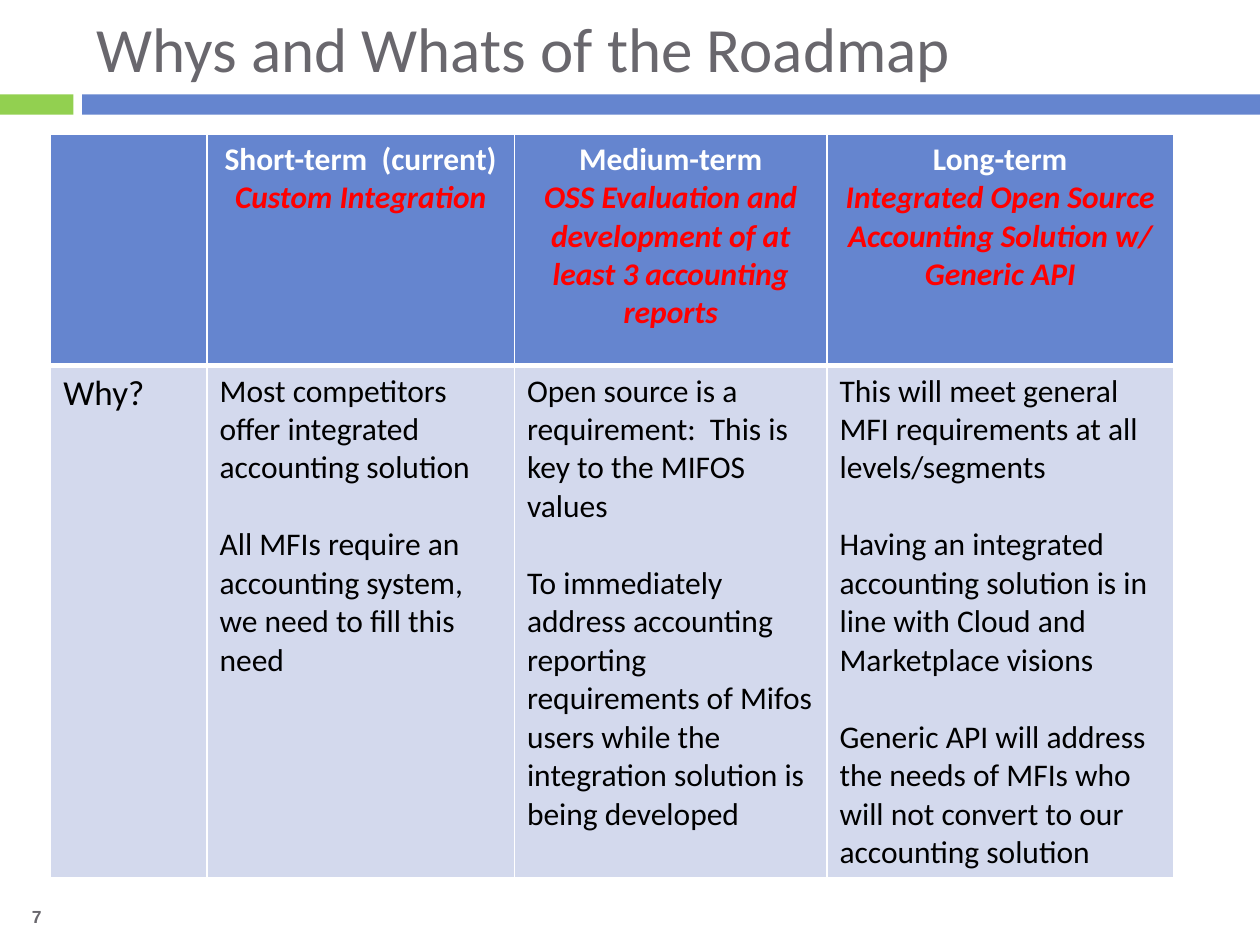
import pptx
import pptx.util
import pptx.dml.color
import pptx.enum.shapes
import pptx.enum.text
from dataclasses import dataclass
from lxml import etree

Pt = pptx.util.Pt
RGB = pptx.dml.color.RGBColor.from_string
ALIGN = pptx.enum.text.PP_ALIGN
MIDDLE = pptx.enum.text.MSO_ANCHOR.MIDDLE
NS = "http://schemas.openxmlformats.org/drawingml/2006/main"


@dataclass(frozen=True)
class Theme:
    blue: str = "6585CF"
    green: str = "92D050"
    pale: str = "D3D9ED"
    grey: str = "69676D"
    red: str = "FF0000"
    white: str = "FFFFFF"
    black: str = "000000"
    font: str = "Calibri"
    number_font: str = "Arial"
    title_size: int = 36
    label_size: int = 20
    text_size: int = 18
    number_size: int = 10
    paragraph_gap: int = 22


T = Theme()
COLUMNS = [89.3, 175.7, 178.6, 198]
ROWS = [132.5, 292.5]
HEADINGS = [
    ("Short-term  (current)", "Custom Integration"),
    ("Medium-term", "OSS Evaluation and development of at least 3 accounting reports"),
    ("Long-term", "Integrated Open Source Accounting Solution w/ Generic API"),
]
REASONS = [
    ("Most competitors offer integrated accounting solution",
     "All MFIs require an accounting system, we need to fill this need"),
    ("Open source is a requirement:  This is key to the MIFOS values",
     "To immediately address accounting reporting requirements of Mifos users "
     "while the integration solution is being developed"),
    ("This will meet general MFI requirements at all levels/segments",
     "Having an integrated accounting solution is in line with Cloud and Marketplace visions",
     "Generic API will address the needs of MFIs who will not convert to our accounting solution"),
]


def write(p, text, color, align=ALIGN.LEFT, **formats):
    p.alignment = align
    r = p.add_run()
    r.text = text
    values = {"name": T.font, "size": T.text_size, "bold": False, "italic": False} | formats
    values["size"] = Pt(values["size"])
    for name, value in values.items():
        setattr(r.font, name, value)
    r.font.color.rgb = RGB(color)


def write_paragraphs(tf, items, gap=0):
    for i, item in enumerate(items):
        p = tf.add_paragraph() if i else tf.paragraphs[0]
        if i and gap:
            p.space_before = Pt(gap)
        write(p, **item)


def add_title(s, x, y, w, h):
    sp = s.shapes.title
    for name, value in {"left": x, "top": y, "width": w, "height": h}.items():
        setattr(sp, name, Pt(value))
    tf = sp.text_frame
    tf.auto_size = pptx.enum.text.MSO_AUTO_SIZE.NONE
    tf.vertical_anchor = MIDDLE
    write(tf.paragraphs[0], "Whys and Whats of the Roadmap", T.grey, size=T.title_size)


def add_band(s, x, y, w, h):
    tab, gap = 42, 5
    for left, width, color in ((x, tab, T.green), (x + tab + gap, w - tab - gap, T.blue)):
        sp = s.shapes.add_shape(pptx.enum.shapes.MSO_SHAPE.RECTANGLE,
                                Pt(left), Pt(y), Pt(width), Pt(h))
        sp.shadow.inherit = False
        sp.fill.solid()
        sp.fill.fore_color.rgb = RGB(color)
        sp.line.fill.background()


def add_number(s, x, y, w, h):
    tf = s.shapes.add_textbox(Pt(x), Pt(y), Pt(w), Pt(h)).text_frame
    tf.word_wrap = True
    tf.vertical_anchor = MIDDLE
    write(tf.paragraphs[0], "7", T.grey, ALIGN.CENTER,
          name=T.number_font, size=T.number_size, bold=True)


def style_cell(cell, fill, top, bottom):
    tcPr = cell._tc.get_or_add_tcPr()
    for side, width in {"L": 1, "R": 1, "T": top, "B": bottom}.items():
        ln = etree.SubElement(tcPr, f"{{{NS}}}ln{side}", w=str(Pt(width)))
        solid = etree.SubElement(ln, f"{{{NS}}}solidFill")
        etree.SubElement(solid, f"{{{NS}}}srgbClr", val=T.white)
    cell.fill.solid()
    cell.fill.fore_color.rgb = RGB(fill)


def add_roadmap(s, x, y, w, h):
    table = s.shapes.add_table(len(ROWS), len(COLUMNS), Pt(x), Pt(y), Pt(w), Pt(h)).table
    for column, share in zip(table.columns, COLUMNS):
        column.width = Pt(round(w * share / sum(COLUMNS), 2))
    for row, share in zip(table.rows, ROWS):
        row.height = Pt(round(h * share / sum(ROWS), 2))
    for c in range(len(COLUMNS)):
        style_cell(table.cell(0, c), T.blue, 1, 3)
        style_cell(table.cell(1, c), T.pale, 3, 1)
    write_paragraphs(table.cell(1, 0).text_frame,
                     [{"text": "Why?", "color": T.black, "size": T.label_size}])
    for c, ((term, goal), reasons) in enumerate(zip(HEADINGS, REASONS), 1):
        heading = {"align": ALIGN.CENTER, "bold": True}
        write_paragraphs(table.cell(0, c).text_frame, [
            {"text": term, "color": T.white, **heading},
            {"text": goal, "color": T.red, "italic": True, **heading},
        ])
        write_paragraphs(table.cell(1, c).text_frame,
                         [{"text": text, "color": T.black} for text in reasons],
                         T.paragraph_gap)


def main():
    prs = pptx.Presentation()
    prs.slide_width, prs.slide_height = Pt(720), Pt(540)
    s = prs.slides.add_slide(prs.slide_layouts[5])
    add_band(s, 0, 54, 720, 11.5)
    add_number(s, 0, 509, 42, 30)
    add_title(s, 48, 0, 642, 54)
    add_roadmap(s, 29, 76.5, sum(COLUMNS), sum(ROWS))
    prs.save("out.pptx")


if __name__ == "__main__":
    main()
